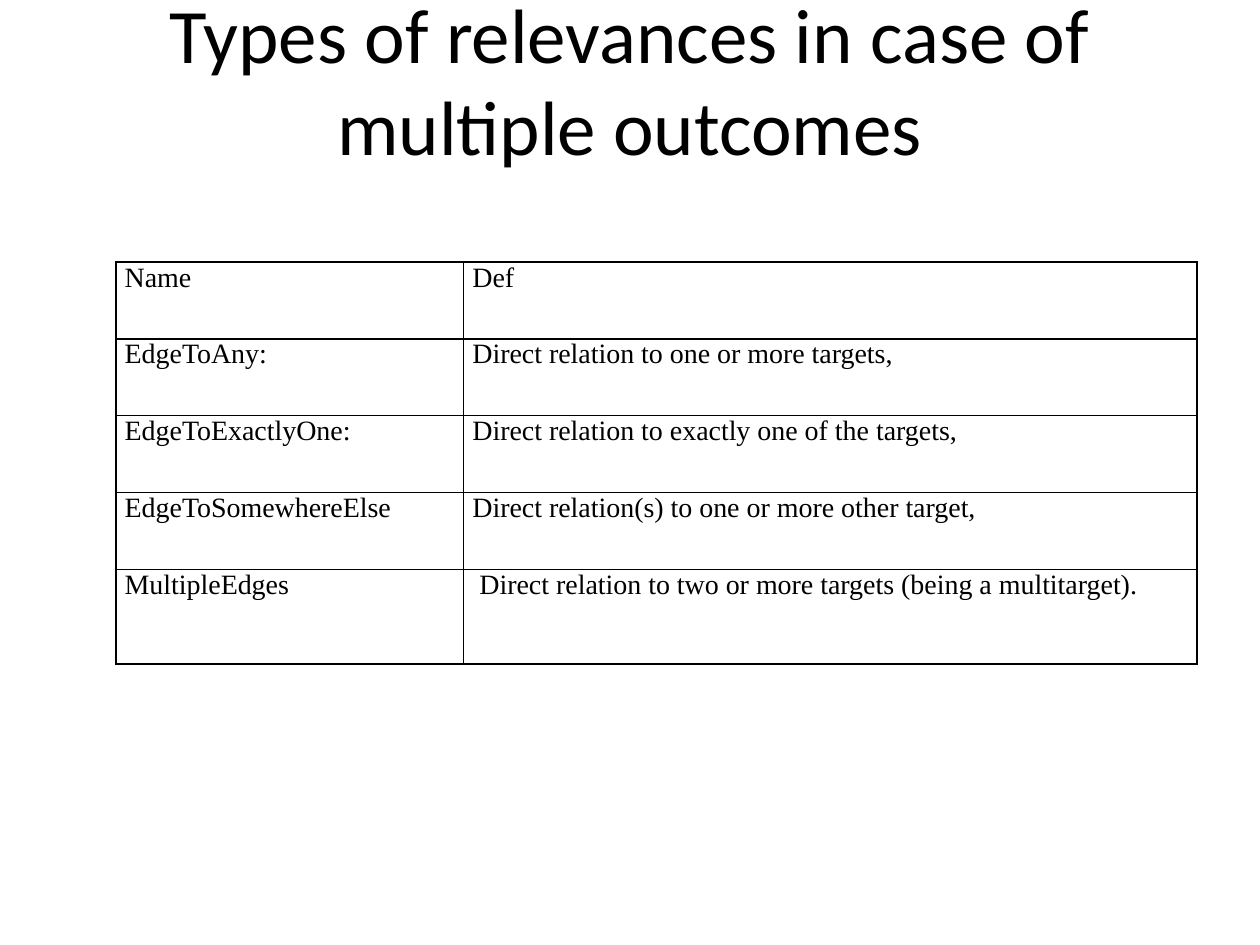
from typing import NamedTuple

from lxml import etree
from pptx import Presentation
from pptx.dml.color import RGBColor
from pptx.enum.text import MSO_ANCHOR, PP_ALIGN
from pptx.oxml.ns import qn
from pptx.util import Inches, Pt

CENTER = PP_ALIGN.CENTER
MIDDLE = MSO_ANCHOR.MIDDLE
BLACK = "000000"
SLIDE_W, SLIDE_H = Inches(10), Inches(7.5)
COL_WIDTHS = (2.76, 5.82)
ROW_HEIGHTS = (0.61,) * 4 + (0.75,)


class Relevance(NamedTuple):
    name: str
    definition: str


ROWS = (
    Relevance("Name", "Def"),
    Relevance("EdgeToAny:", "Direct relation to one or more targets,"),
    Relevance("EdgeToExactlyOne:", "Direct relation to exactly one of the targets,"),
    Relevance("EdgeToSomewhereElse", "Direct relation(s) to one or more other target,"),
    Relevance("MultipleEdges", " Direct relation to two or more targets (being a multitarget)."),
)


def color(value: str) -> RGBColor:
    return RGBColor.from_string(value)


def set_text(tf, text: str, font: str, size: float) -> None:
    tf.text = text
    f = tf.paragraphs[0].runs[0].font
    f.name, f.size, f.bold = font, Pt(size), False
    f.color.rgb = color(BLACK)


def add_borders(cell, hex_color: str, width: float) -> None:
    tc_pr = cell._tc.get_or_add_tcPr()
    for i, side in enumerate(("a:lnL", "a:lnR", "a:lnT", "a:lnB")):
        ln = etree.Element(qn(side), w=str(Pt(width)))
        fill = etree.SubElement(ln, qn("a:solidFill"))
        etree.SubElement(fill, qn("a:srgbClr"), val=hex_color)
        tc_pr.insert(i, ln)  # borders come before the cell's fill


def format_cell(cell, text: str) -> None:
    cell.margin_left = cell.margin_right = Inches(0.07)
    cell.margin_top = cell.margin_bottom = 0
    cell.fill.background()
    set_text(cell.text_frame, text, "Times New Roman", 16)
    add_borders(cell, BLACK, 1)


def add_title(slide, text: str) -> None:
    title = slide.shapes.title
    title.left, title.top = int(SLIDE_W * 0.05), 0
    title.width, title.height = int(SLIDE_W * 0.9), SLIDE_H // 6
    tf = title.text_frame
    tf.word_wrap = True
    tf.vertical_anchor = MIDDLE
    set_text(tf, text, "Calibri", 44)
    tf.paragraphs[0].alignment = CENTER


def add_relevance_table(slide) -> None:
    frame = slide.shapes.add_table(
        len(ROWS), len(COL_WIDTHS), Inches(0.92), Inches(2.08),
        Inches(sum(COL_WIDTHS)), Inches(sum(ROW_HEIGHTS)))
    table = frame.table
    table.first_row = table.horz_banding = False
    for col, width in zip(table.columns, COL_WIDTHS):
        col.width = Inches(width)
    for row, height, texts in zip(table.rows, ROW_HEIGHTS, ROWS):
        row.height = Inches(height)
        for cell, text in zip(row.cells, texts):
            format_cell(cell, text)


def main() -> None:
    prs = Presentation()
    prs.slide_width, prs.slide_height = SLIDE_W, SLIDE_H
    slide = prs.slides.add_slide(prs.slide_layouts[5])  # title only
    add_title(slide, "Types of relevances in case of multiple outcomes")
    add_relevance_table(slide)
    prs.save("out.pptx")


if __name__ == "__main__":
    main()
